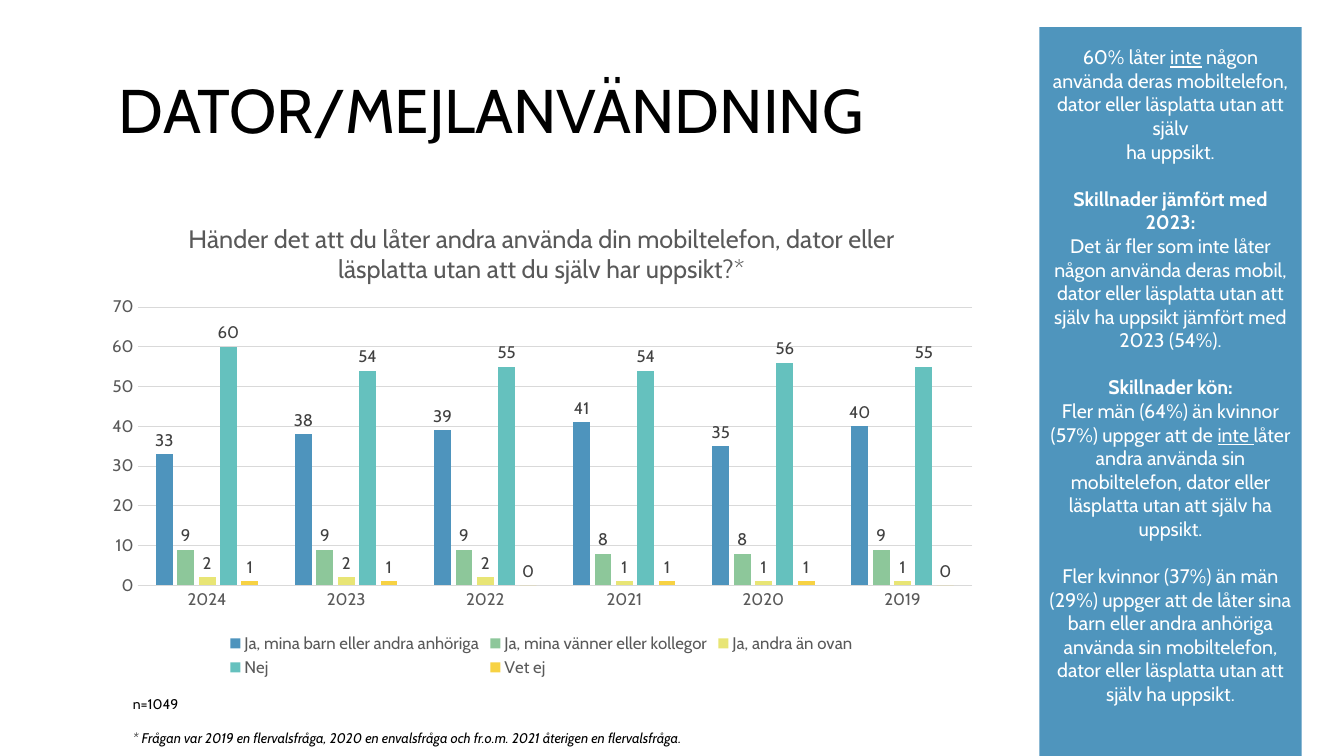
"""Build the slide on computer and e-mail habits with its chart and findings panel."""
from lxml import etree
from pptx import Presentation
from pptx.chart.data import CategoryChartData
from pptx.dml.color import RGBColor
from pptx.enum.chart import XL_CHART_TYPE, XL_LABEL_POSITION, XL_LEGEND_POSITION, XL_TICK_MARK
from pptx.enum.shapes import MSO_SHAPE
from pptx.enum.text import MSO_ANCHOR, MSO_AUTO_SIZE, PP_ALIGN
from pptx.oxml.ns import qn
from pptx.util import Inches, Pt

COLUMNS = XL_CHART_TYPE.COLUMN_CLUSTERED
OUTSIDE_END = XL_LABEL_POSITION.OUTSIDE_END
BOTTOM = XL_LEGEND_POSITION.BOTTOM
NO_TICK = XL_TICK_MARK.NONE
TOP, MIDDLE = MSO_ANCHOR.TOP, MSO_ANCHOR.MIDDLE
LEFT, CENTER = PP_ALIGN.LEFT, PP_ALIGN.CENTER
TITLE_ONLY = 5

FONT = "Cabin"
BLACK, WHITE, GREY, DARK, RULE = "000000", "FFFFFF", "595959", "404040", "D9D9D9"
PANEL_BLUE = "4F95BD"

HEADING = "DATOR/MEJLANVÄNDNING"
QUESTION = ("Händer det att du låter andra använda din mobiltelefon, "
            "dator eller läsplatta utan att du själv har uppsikt?*")
YEARS = ["2024", "2023", "2022", "2021", "2020", "2019"]
ANSWERS = [
    ("Ja, mina barn eller andra anhöriga", "4E94BD", [33, 38, 39, 41, 35, 40]),
    ("Ja, mina vänner eller kollegor", "8DC79A", [9, 9, 9, 8, 8, 9]),
    ("Ja, andra än ovan", "E8E575", [2, 2, 2, 1, 1, 1]),
    ("Nej", "65C1BE", [60, 54, 55, 54, 56, 55]),
    ("Vet ej", "F7D243", [1, 1, 0, 1, 1, 0]),
]
PLAIN, BOLD, UNDERLINE, ITALIC = {}, {"bold": True}, {"underline": True}, {"italic": True}
FINDINGS = [
    (0, [("60% låter ", PLAIN), ("inte", UNDERLINE),
         (" någon använda deras mobiltelefon, dator eller läsplatta utan att själv", PLAIN)]),
    (0, [("ha uppsikt.", PLAIN)]),
    (17, [("Skillnader jämfört med 2023:", BOLD)]),
    (0, [("Det är fler som inte låter någon använda deras mobil, dator eller läsplatta "
          "utan att själv ha uppsikt jämfört med 2023 (54%).", PLAIN)]),
    (17, [("Skillnader kön:", BOLD)]),
    (0, [("Fler män (64%) än kvinnor (57%) uppger att de ", PLAIN), ("inte ", UNDERLINE),
         ("låter andra använda sin mobiltelefon, dator eller läsplatta "
          "utan att själv ha uppsikt.", PLAIN)]),
    (17, [("Fler kvinnor (37%) än män (29%) uppger att de låter sina barn eller andra anhöriga "
           "använda sin mobiltelefon, dator eller läsplatta utan att själv ha uppsikt.", PLAIN)]),
]
NOTES = [
    (0, [("n=1049", PLAIN)]),
    (12, [("* Frågan var 2019 en flervalsfråga, 2020 en envalsfråga och fr.o.m. 2021 "
           "återigen en flervalsfråga.", ITALIC)]),
]
HEADING_BOX = (1.08, 0.4, 11.5, 1.45)
CHART_BOX = (0.92, 2, 8.9, 4.76)
NOTES_BOX = (1.22, 6.85, 9.9, 0.61)
PANEL_BOX = (10.31, 0.27, 2.6, 7.36)
PLOT_SHARE = {"x": 0.05, "y": 0.22, "w": 0.93, "h": 0.58}


def color(value):
    return RGBColor.from_string(value)


def inches(box):
    return [Inches(length) for length in box]


def style(font, size, tint, **extras):
    font.color.rgb = color(tint)
    for name, value in {"name": FONT, "size": Pt(size), "bold": False, **extras}.items():
        setattr(font, name, value)


def write(frame, paragraphs, size, tint, align=LEFT, anchor=TOP):
    settings = {"word_wrap": True, "auto_size": MSO_AUTO_SIZE.NONE, "vertical_anchor": anchor}
    for name, value in settings.items():
        setattr(frame, name, value)
    for index, (gap, runs) in enumerate(paragraphs):
        paragraph = frame.add_paragraph() if index else frame.paragraphs[0]
        paragraph.alignment = align
        paragraph.space_before = Pt(gap)
        for text, extras in runs:
            run = paragraph.add_run()
            run.text = text
            style(run.font, size, tint, **extras)


def place_plot(plot_area):
    for old in plot_area.findall(qn("c:layout")):
        plot_area.remove(old)
    layout = etree.Element(qn("c:layout"))
    manual = etree.SubElement(layout, qn("c:manualLayout"))
    settings = {"layoutTarget": "inner", "xMode": "edge", "yMode": "edge", **PLOT_SHARE}
    for name, value in settings.items():
        etree.SubElement(manual, qn(f"c:{name}")).set("val", str(value))
    plot_area.insert(0, layout)


def add_answers(slide):
    data = CategoryChartData()
    data.categories = YEARS
    for name, _, values in ANSWERS:
        data.add_series(name, values)
    chart = slide.shapes.add_chart(COLUMNS, *inches(CHART_BOX), data).chart
    style(chart.font, 10, BLACK)
    chart.has_title = True
    write(chart.chart_title.text_frame, [(0, [(QUESTION, PLAIN)])], 18, GREY, CENTER)
    chart.chart_title.include_in_layout = False
    chart.has_legend = True
    chart.legend.position = BOTTOM
    chart.legend.include_in_layout = False
    style(chart.legend.font, 12, GREY)

    years, percent = chart.category_axis, chart.value_axis
    for axis in (years, percent):
        axis.major_tick_mark = axis.minor_tick_mark = NO_TICK
        style(axis.tick_labels.font, 12, GREY)
    percent.minimum_scale, percent.maximum_scale, percent.major_unit = 0, 70, 10
    percent.format.line.fill.background()
    for line in (years.format.line, percent.major_gridlines.format.line):
        line.color.rgb = color(RULE)
        line.width = Pt(0.75)

    plot = chart.plots[0]
    for name, value in {"gap_width": 219, "overlap": -27, "vary_by_categories": False}.items():
        setattr(plot, name, value)
    for series, (_, tint, _) in zip(plot.series, ANSWERS):
        series.format.fill.solid()
        series.format.fill.fore_color.rgb = color(tint)
        labels = series.data_labels
        labels.show_value = True
        labels.position = OUTSIDE_END
        style(labels.font, 12, DARK)
    place_plot(chart.element.find(".//" + qn("c:plotArea")))


def main():
    deck = Presentation()
    deck.slide_width, deck.slide_height = Inches(13.33), Inches(7.5)
    slide = deck.slides.add_slide(deck.slide_layouts[TITLE_ONLY])

    heading = slide.shapes.title
    heading.left, heading.top, heading.width, heading.height = inches(HEADING_BOX)
    write(heading.text_frame, [(0, [(HEADING, PLAIN)])], 44, BLACK, LEFT, MIDDLE)
    heading.text_frame.paragraphs[0].line_spacing = 0.9

    add_answers(slide)
    write(slide.shapes.add_textbox(*inches(NOTES_BOX)).text_frame, NOTES, 10, BLACK)

    panel = slide.shapes.add_shape(MSO_SHAPE.RECTANGLE, *inches(PANEL_BOX))
    panel.shadow.inherit = False
    panel.fill.solid()
    panel.fill.fore_color.rgb = color(PANEL_BLUE)
    panel.line.fill.background()
    panel.text_frame.margin_top = Inches(0.18)
    write(panel.text_frame, FINDINGS, 14, WHITE, CENTER)

    deck.save("out.pptx")


if __name__ == "__main__":
    main()
